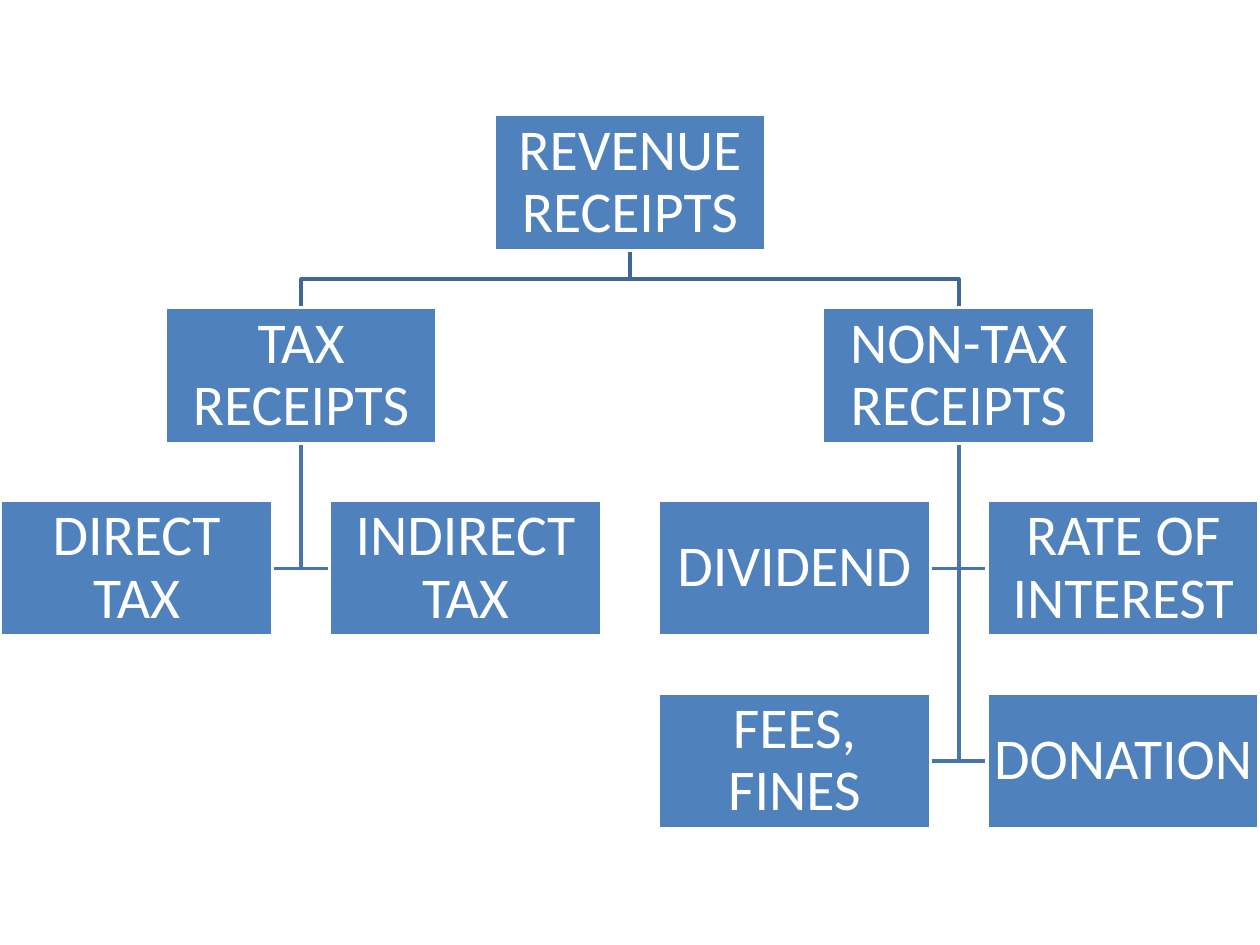
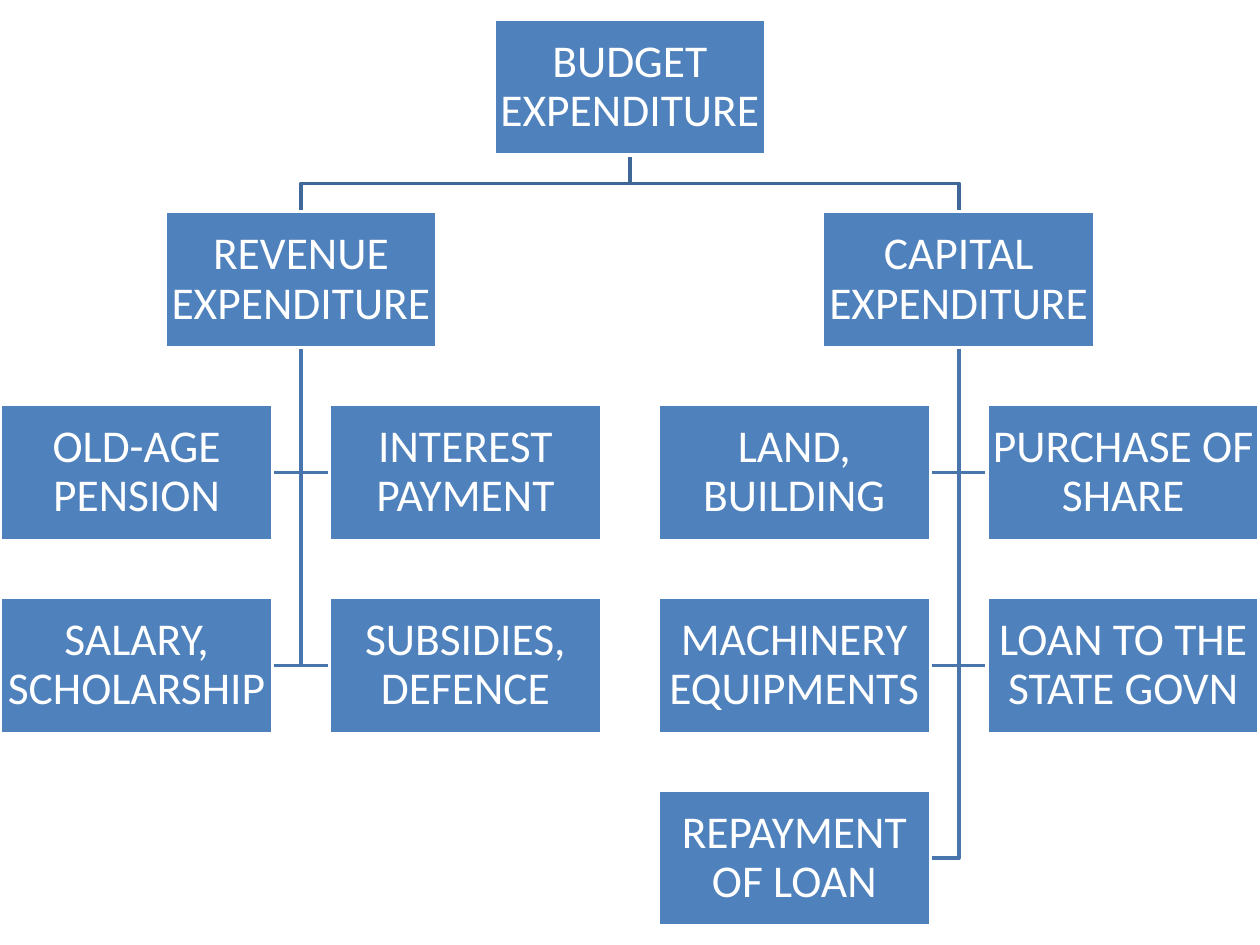
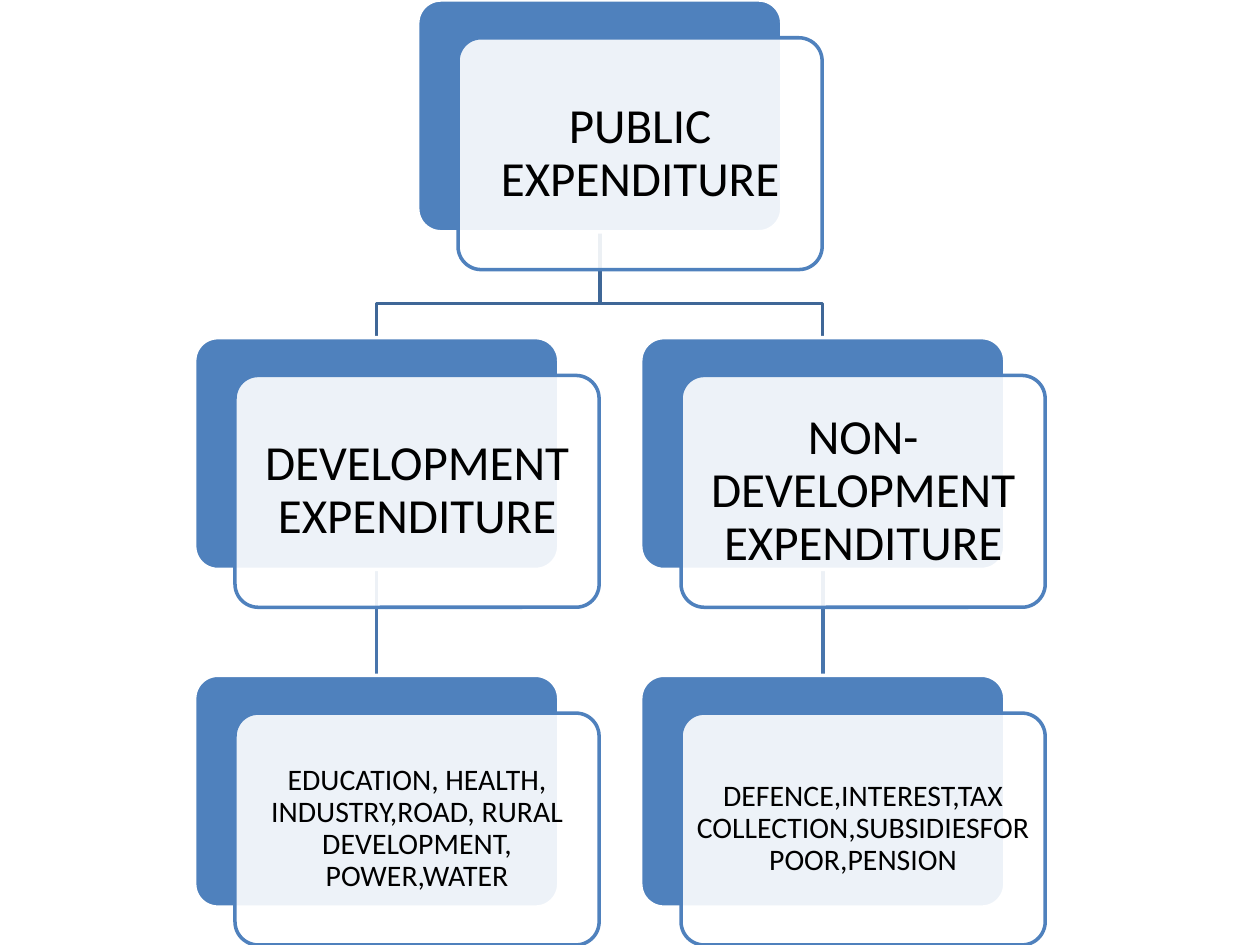
from lxml import etree
from pptx import Presentation
from pptx.dml.color import RGBColor
from pptx.enum.shapes import MSO_CONNECTOR, MSO_SHAPE
from pptx.enum.text import MSO_ANCHOR, PP_ALIGN
from pptx.oxml.ns import qn
from pptx.util import Inches, Pt

FONT = "Calibri"
BLUE, WHITE, BLACK = "4F81BD", "FFFFFF", "000000"
ROOT_LINE, LEAF_LINE = "3F6797", "4875AC"
LINE_WIDTH = 2

# Box trees
BOX_WIDTH, BOX_HEIGHT = 2.16, 1.08
BOX_ROW = 1.53
ROOT_CENTER = 5
BRANCH_OFFSET = 2.61
LEAF_OFFSET = BRANCH_OFFSET / 2

# Card tree
CARD_WIDTH, CARD_HEIGHT = 2.89, 1.84
CARD_ROW = 2.68
CARD_CENTER = 4.76
CARD_OFFSET = 1.77
FRONT_SHIFT_X, FRONT_SHIFT_Y = 0.32, 0.3


def color(hex_text):
    return RGBColor.from_string(hex_text)


def set_line(shape, line_color):
    shape.line.color.rgb = color(line_color)
    shape.line.width = Pt(LINE_WIDTH)


def add_block(slide, kind, left, top, width, height, fill, line):
    shape = slide.shapes.add_shape(
        kind, Inches(left), Inches(top), Inches(width), Inches(height))
    shape.shadow.inherit = False
    shape.fill.solid()
    shape.fill.fore_color.rgb = color(fill)
    set_line(shape, line)
    return shape


def set_opacity(shape, percent):
    fill_color = shape.fill._xPr.find(qn("a:solidFill"))[0]
    etree.SubElement(fill_color, qn("a:alpha"), val=str(percent * 1000))


def write_text(shape, text, size, text_color, inset):
    frame = shape.text_frame
    margins = dict.fromkeys(
        ("margin_left", "margin_top", "margin_right", "margin_bottom"), Inches(inset))
    frame_format = {"word_wrap": True, "vertical_anchor": MSO_ANCHOR.MIDDLE, **margins}
    for name, value in frame_format.items():
        setattr(frame, name, value)
    paragraph = frame.paragraphs[0]
    paragraph.alignment = PP_ALIGN.CENTER
    paragraph.line_spacing = 0.9
    run = paragraph.add_run()
    run.text = text
    run.font.name = FONT
    run.font.size = Pt(size)
    run.font.color.rgb = color(text_color)


def add_bent_line(slide, points, line_color):
    start, *rest = [(Inches(x), Inches(y)) for x, y in points]
    builder = slide.shapes.build_freeform(*start)
    builder.add_line_segments(rest, close=False)
    shape = builder.convert_to_shape()
    shape.shadow.inherit = False
    shape.fill.background()
    set_line(shape, line_color)


def add_fork(slide, center, top, bend, bottom, offset):
    """Join a root to the branches on its left and right."""
    for side in (1, -1):
        end = center + side * offset
        add_bent_line(
            slide, [(center, top), (center, bend), (end, bend), (end, bottom)], ROOT_LINE)


def add_vertical_line(slide, x, top, bottom):
    connector = slide.shapes.add_connector(
        MSO_CONNECTOR.STRAIGHT, Inches(x), Inches(top), Inches(x), Inches(bottom))
    etree.SubElement(connector._element.spPr, qn("a:effectLst"))
    set_line(connector, LEAF_LINE)


def add_box(slide, center, top, text, size):
    box = add_block(slide, MSO_SHAPE.RECTANGLE, center - BOX_WIDTH / 2, top,
                    BOX_WIDTH, BOX_HEIGHT, BLUE, WHITE)
    write_text(box, text, size, WHITE, 0.02)


def add_box_tree(slide, top, size, root, branches):
    """Draw a root, two branches and their leaves in rows of two."""
    branch_top = top + BOX_ROW
    root_bottom = top + BOX_HEIGHT
    add_fork(slide, ROOT_CENTER, root_bottom, (root_bottom + branch_top) / 2,
             branch_top, BRANCH_OFFSET)

    boxes = [(ROOT_CENTER, top, root)]
    for side, (branch, leaves) in zip((-1, 1), branches):
        center = ROOT_CENTER + side * BRANCH_OFFSET
        boxes.append((center, branch_top, branch))
        for index, leaf in enumerate(leaves):
            row, column = divmod(index, 2)
            direction = 2 * column - 1
            leaf_center = center + direction * LEAF_OFFSET
            leaf_top = branch_top + (row + 1) * BOX_ROW
            middle = leaf_top + BOX_HEIGHT / 2
            leaf_edge = leaf_center - direction * BOX_WIDTH / 2
            add_bent_line(
                slide,
                [(center, branch_top + BOX_HEIGHT), (center, middle), (leaf_edge, middle)],
                LEAF_LINE)
            boxes.append((leaf_center, leaf_top, leaf))

    for center, box_top, text in boxes:
        add_box(slide, center, box_top, text, size)


def add_card(slide, center, top, text, size, inset):
    """Draw a blue card with a translucent text card in front of it."""
    left = center - CARD_WIDTH / 2
    back = add_block(slide, MSO_SHAPE.ROUNDED_RECTANGLE, left, top,
                     CARD_WIDTH, CARD_HEIGHT, BLUE, WHITE)
    front = add_block(slide, MSO_SHAPE.ROUNDED_RECTANGLE, left + FRONT_SHIFT_X,
                      top + FRONT_SHIFT_Y, CARD_WIDTH, CARD_HEIGHT, WHITE, BLUE)
    for card in (back, front):
        card.adjustments[0] = 0.1
    set_opacity(front, 90)
    write_text(front, text, size, BLACK, inset)


def add_card_tree(slide, root, branches):
    add_fork(slide, CARD_CENTER, CARD_HEIGHT, CARD_ROW - 0.27, CARD_ROW, CARD_OFFSET)
    centers = [CARD_CENTER - CARD_OFFSET, CARD_CENTER + CARD_OFFSET]
    for center in centers:
        add_vertical_line(slide, center, CARD_ROW + CARD_HEIGHT, 2 * CARD_ROW)

    add_card(slide, CARD_CENTER, 0, root, 28, 0.12)
    for center, (branch, details) in zip(centers, branches):
        add_card(slide, center, CARD_ROW, branch, 28, 0.12)
        add_card(slide, center, 2 * CARD_ROW, details, 17, 0.07)


def main():
    presentation = Presentation()
    presentation.slide_width = Inches(10)
    presentation.slide_height = Inches(7.5)
    blank_layout = presentation.slide_layouts[6]
    receipts, budget, public = [
        presentation.slides.add_slide(blank_layout) for _ in range(3)]

    add_box_tree(receipts, 0.91, 33, "REVENUE RECEIPTS", [
        ("TAX RECEIPTS", ["DIRECT TAX", "INDIRECT TAX"]),
        ("NON-TAX RECEIPTS", ["DIVIDEND", "RATE OF INTEREST", "FEES, FINES", "DONATION"]),
    ])
    add_box_tree(budget, 0.15, 26, "BUDGET EXPENDITURE", [
        ("REVENUE EXPENDITURE", [
            "OLD-AGE PENSION", "INTEREST PAYMENT",
            "SALARY, SCHOLARSHIP", "SUBSIDIES, DEFENCE"]),
        ("CAPITAL EXPENDITURE", [
            "LAND, BUILDING", "PURCHASE OF SHARE", "MACHINERY EQUIPMENTS",
            "LOAN TO THE STATE GOVN", "REPAYMENT OF LOAN"]),
    ])
    add_card_tree(public, "PUBLIC EXPENDITURE", [
        ("DEVELOPMENT EXPENDITURE",
         "EDUCATION, HEALTH, INDUSTRY,ROAD, RURAL DEVELOPMENT, POWER,WATER"),
        ("NON-DEVELOPMENT EXPENDITURE",
         "DEFENCE,INTEREST,TAX COLLECTION,SUBSIDIESFOR POOR,PENSION"),
    ])
    presentation.save("out.pptx")


if __name__ == "__main__":
    main()
